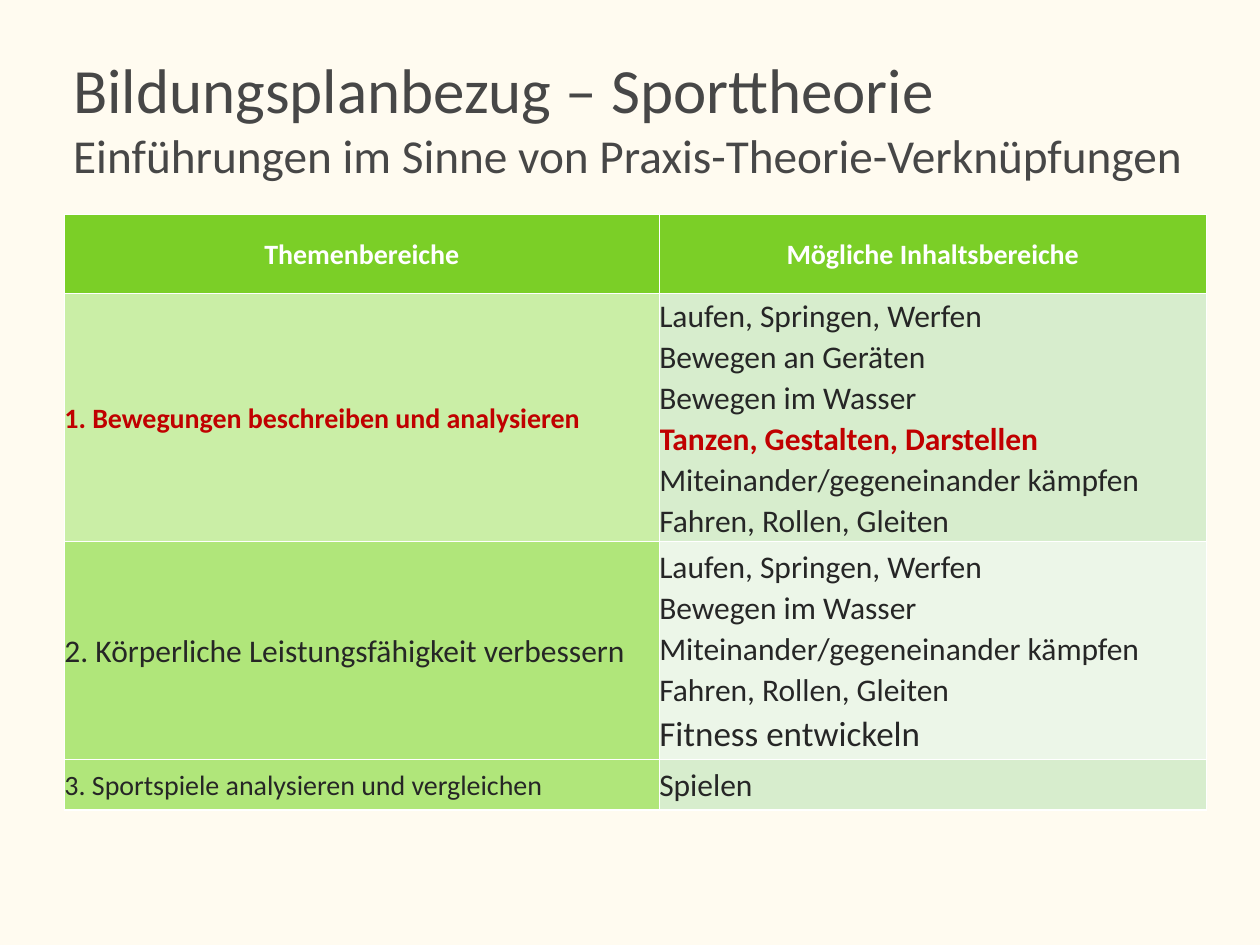
from copy import deepcopy

from lxml import etree
from pptx import Presentation
from pptx.dml.color import RGBColor
from pptx.enum.text import MSO_ANCHOR, MSO_AUTO_SIZE, PP_ALIGN
from pptx.oxml.ns import qn
from pptx.util import Cm, Pt

MID = MSO_ANCHOR.MIDDLE
FIXED = MSO_AUTO_SIZE.NONE
LEFT, CENTER = PP_ALIGN.LEFT, PP_ALIGN.CENTER
COLORS = {
    "page": "FFFBF0", "title": "474747", "white": "FFFFFF", "text": "262626",
    "red": "C00000", "head": "7BCF27", "soft": "CAEEA6", "lime": "B0E67A",
    "mint": "D7EDCD", "pale": "ECF6E8",
}
HEAD = (16, "white", True)
MARK = (16, "red", True)
KEY = (18, "red", True)
BODY = (18, "text", False)
SMALL = (16, "text", False)
LARGE = (20, "text", False)


class Deck:
    """Holds the style and the current slide."""

    def __init__(self, width, height):
        self.file = Presentation()
        self.file.slide_width, self.file.slide_height = Cm(width), Cm(height)
        self.font = "Calibri"

    def color(self, name):
        return RGBColor.from_string(COLORS[name])

    def put(self, item, values):
        for name, value in values.items():
            setattr(item, name, value)

    def paint(self, fill, name):
        fill.solid()
        fill.fore_color.rgb = self.color(name)

    def page(self, fill):
        self.slide = self.file.slides.add_slide(self.file.slide_layouts[5])
        self.paint(self.slide.background.fill, fill)

    def text(self, para, lines, form):
        self.put(para, form)
        for index, (words, (size, color, bold)) in enumerate(lines):
            run = para.add_run()
            run.text = words
            self.put(run.font, {"name": self.font, "size": Pt(size), "bold": bold})
            run.font.color.rgb = self.color(color)
            if index < len(lines) - 1:
                para.add_line_break()
                para._p[-1].append(deepcopy(run._r.rPr))

    def title(self, box, lines):
        shape = self.slide.shapes.title
        self.put(shape, dict(zip(("left", "top", "width", "height"), map(Cm, box))))
        frame = shape.text_frame
        self.put(frame, {"vertical_anchor": MID, "word_wrap": True, "auto_size": FIXED})
        self.text(frame.paragraphs[0], lines, {"alignment": LEFT})

    def border(self, cell):
        props = cell._tc.get_or_add_tcPr()
        for index, side in enumerate(("lnL", "lnR", "lnT", "lnB")):
            line = etree.Element(qn(f"a:{side}"), w=str(Pt(1)))
            fill = etree.SubElement(line, qn("a:solidFill"))
            etree.SubElement(fill, qn("a:srgbClr"), val=COLORS["white"])
            props.insert(index, line)

    def table(self, left, top, cols, rows, cells):
        size = map(Cm, (left, top, sum(cols), sum(rows)))
        grid = self.slide.shapes.add_table(len(rows), len(cols), *size).table
        for col, width in zip(grid.columns, cols):
            col.width = Cm(width)
        for row, height, items in zip(grid.rows, rows, cells):
            row.height = Cm(height)
            for cell, (fill, lines, form) in zip(row.cells, items):
                self.put(cell, {"vertical_anchor": MID, "margin_left": 0,
                                "margin_right": 0, "margin_top": 0, "margin_bottom": 0})
                self.paint(cell.fill, fill)
                self.border(cell)
                self.text(cell.text_frame.paragraphs[0], lines,
                          {"line_spacing": 1.07, **form})


def main():
    deck = Deck(25.4, 19.05)
    deck.page("page")
    deck.title((1.22, 0.81, 23.34, 3.1), [
        ("Bildungsplanbezug – Sporttheorie ", (36, "title", False)),
        ("Einführungen im Sinne von Praxis-Theorie-Verknüpfungen", (27, "title", False)),
    ])
    run, water = ("Laufen, Springen, Werfen", BODY), ("Bewegen im Wasser", BODY)
    tail = [("Miteinander/gegeneinander kämpfen", BODY),
            ("Fahren, Rollen, Gleiten", BODY)]
    mid, after = {"alignment": CENTER}, {"space_after": Pt(8)}
    both = {"space_before": Pt(6), "space_after": Pt(6)}
    deck.table(1.3, 4.32, (11.99, 11.03), (1.6, 5, 4.39, 1.02), [
        [("head", [("Themenbereiche", HEAD)], mid),
         ("head", [("Mögliche Inhaltsbereiche", HEAD)], mid)],
        [("soft", [("1. Bewegungen beschreiben und analysieren", MARK)], {}),
         ("mint", [run, ("Bewegen an Geräten", BODY), water,
                   ("Tanzen, Gestalten, Darstellen", KEY), *tail], after)],
        [("lime", [("2. Körperliche Leistungsfähigkeit verbessern", BODY)], {}),
         ("pale", [run, water, *tail, ("Fitness entwickeln", LARGE)], after)],
        [("lime", [("3. Sportspiele analysieren und vergleichen", SMALL)], both),
         ("mint", [("Spielen", BODY)], both)],
    ])
    deck.file.save("out.pptx")


if __name__ == "__main__":
    main()
